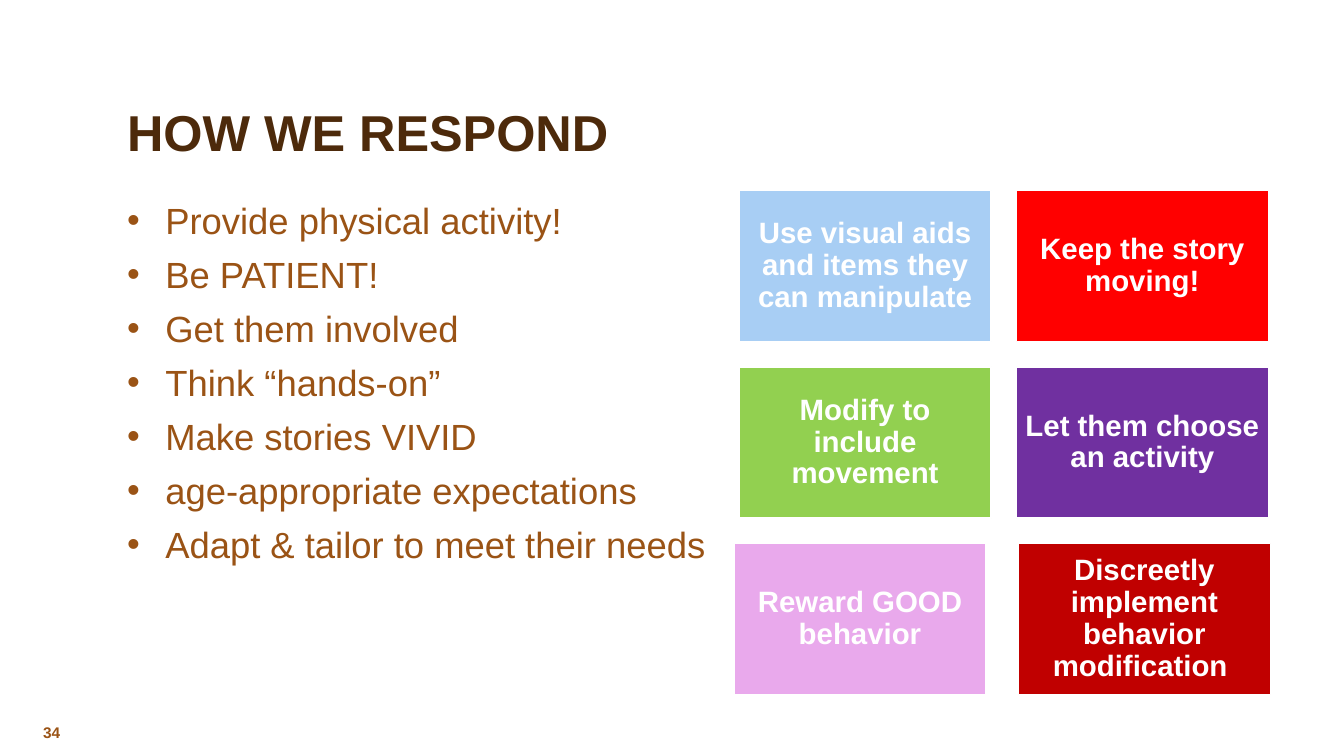
import pptx
import pptx.util
import pptx.dml.color
import pptx.enum.shapes
import pptx.enum.text
import pptx.oxml.ns
import lxml.etree

Inches = pptx.util.Inches
Pt = pptx.util.Pt
RGBColor = pptx.dml.color.RGBColor
ALIGN = pptx.enum.text.PP_ALIGN
ANCHOR = pptx.enum.text.MSO_ANCHOR

WHITE = RGBColor(0xFF, 0xFF, 0xFF)
DARK_BROWN = RGBColor(0x4D, 0x2A, 0x0B)
BROWN = RGBColor(0x9A, 0x53, 0x15)
LIGHT_BLUE = RGBColor(0xA8, 0xCE, 0xF4)
RED = RGBColor(0xFF, 0x00, 0x00)
GREEN = RGBColor(0x92, 0xD0, 0x50)
PURPLE = RGBColor(0x70, 0x30, 0xA0)
PINK = RGBColor(0xE9, 0xA9, 0xEC)
DARK_RED = RGBColor(0xC0, 0x00, 0x00)

TITLE = "HOW WE RESPOND"
NUMBER = "34"
RESPONSES = [
    "Provide physical activity!",
    "Be PATIENT!",
    "Get them involved",
    "Think “hands-on”",
    "Make stories VIVID",
    "age-appropriate expectations",
    "Adapt & tailor to meet their needs",
]
CARDS = [
    ("Use visual aids and items they can manipulate", LIGHT_BLUE, 0),
    ("Keep the story moving!", RED, 0),
    ("Modify to include movement", GREEN, 0),
    ("Let them choose an activity", PURPLE, 0),
    ("Reward GOOD behavior", PINK, -0.05),
    ("Discreetly implement behavior modification ", DARK_RED, 0.02),
]
COLUMNS = 2
CARD_LEFT, CARD_TOP = 7.33, 1.89
CARD_W, CARD_H, GAP = 2.5, 1.5, 0.25


def place(sp, left, top, width, height):
    sp.left, sp.top = Inches(left), Inches(top)
    sp.width, sp.height = Inches(width), Inches(height)


def write(sp, lines, size, color, bold=False, align=ALIGN.LEFT, anchor=ANCHOR.TOP,
          spacing=1.0, before=0, bullet=None, inset=None):
    tf = sp.text_frame
    tf.word_wrap = True
    tf.auto_size = pptx.enum.text.MSO_AUTO_SIZE.NONE
    tf.vertical_anchor = anchor
    if inset is not None:
        tf.margin_left = tf.margin_right = Inches(inset)
        tf.margin_top = tf.margin_bottom = Inches(inset)
    for i, text in enumerate(lines):
        p = tf.paragraphs[0] if i == 0 else tf.add_paragraph()
        if bullet:
            pPr = p._p.get_or_add_pPr()
            pPr.set("marL", str(Inches(0.38)))
            pPr.set("indent", str(-Inches(0.38)))
            bu = lxml.etree.SubElement(pPr, pptx.oxml.ns.qn("a:buChar"))
            bu.set("char", bullet)
        p.alignment = align
        p.line_spacing = spacing
        p.space_before = Pt(before if i else 0)
        r = p.add_run()
        r.text = text
        r.font.name = "Arial"
        r.font.size = Pt(size)
        r.font.bold = bold
        r.font.color.rgb = color


prs = pptx.Presentation()
prs.slide_width, prs.slide_height = Inches(13.33), Inches(7.5)
s = prs.slides.add_slide(prs.slide_layouts[1])

title, body = s.placeholders
place(title, 1.16, 0.33, 11, 1.33)
write(title, [TITLE], 36, DARK_BROWN, bold=True, anchor=ANCHOR.BOTTOM, spacing=0.9)

place(body, 1.16, 1.92, 6.14, 4.77)
write(body, RESPONSES, 26, BROWN, before=7.3, bullet="•")

for i, (text, color, shift) in enumerate(CARDS):
    row, col = divmod(i, COLUMNS)
    sp = s.shapes.add_shape(
        pptx.enum.shapes.MSO_SHAPE.RECTANGLE,
        Inches(CARD_LEFT + col * (CARD_W + GAP) + shift),
        Inches(CARD_TOP + row * (CARD_H + GAP)),
        Inches(CARD_W), Inches(CARD_H))
    sp.shadow.inherit = False
    sp.fill.solid()
    sp.fill.fore_color.rgb = color
    sp.line.color.rgb = WHITE
    sp.line.width = Pt(1)
    write(sp, [text], 21, WHITE, bold=True, align=ALIGN.CENTER,
          anchor=ANCHOR.MIDDLE, spacing=0.9, inset=0.09)

number = s.shapes.add_textbox(Inches(0.33), Inches(7.14), Inches(0.83), Inches(0.25))
write(number, [NUMBER], 11, BROWN, bold=True, anchor=ANCHOR.MIDDLE)

prs.save("out.pptx")
